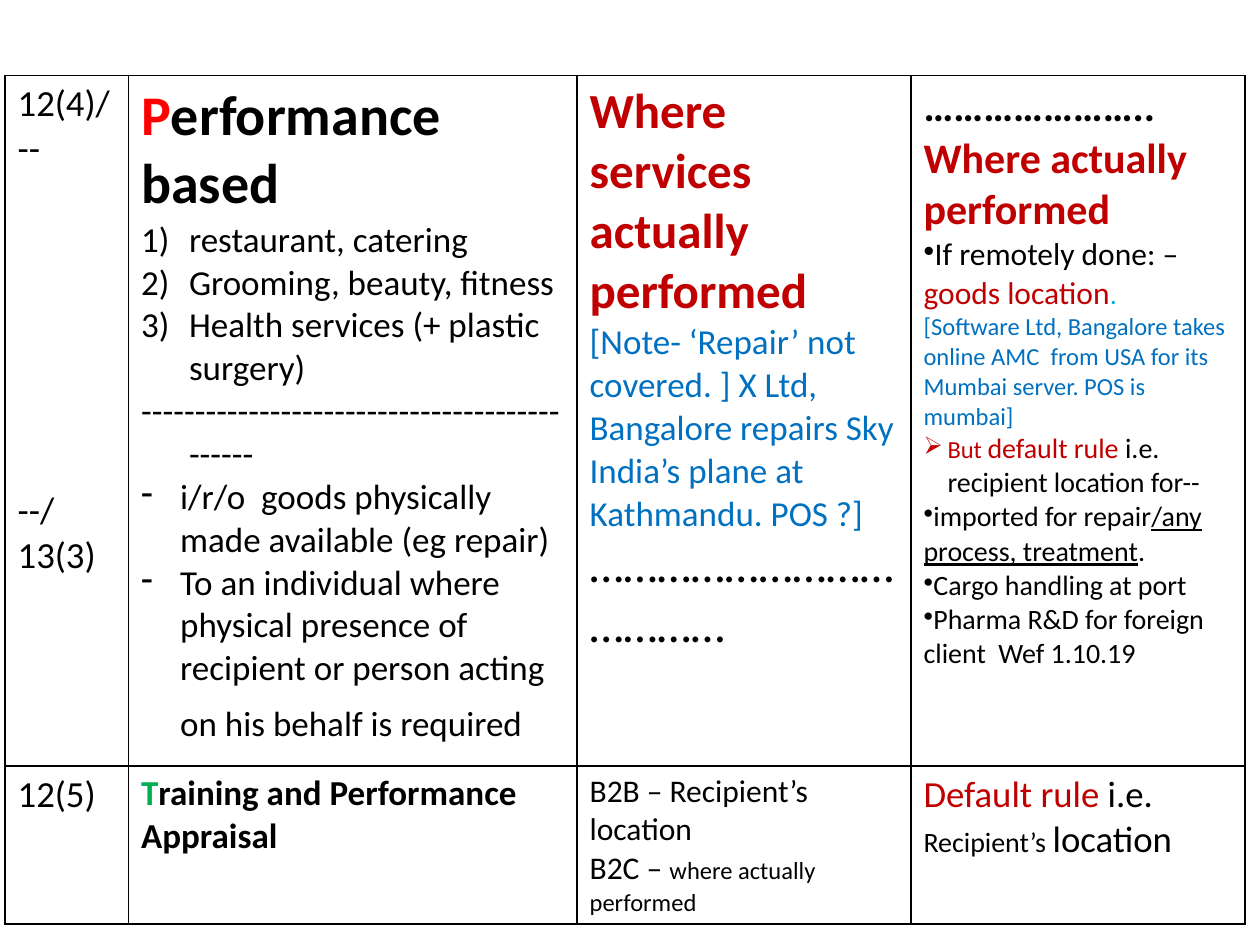
from lxml.etree import SubElement
from pptx import Presentation
from pptx.dml.color import RGBColor
from pptx.oxml.ns import qn
from pptx.util import Inches, Pt

COLORS = {
    "black": "000000", "white": "FFFFFF", "red": "FF0000", "dark red": "C00000",
    "blue": "0070C0", "light blue": "00B0F0", "green": "00B050",
}
FONT = "Calibri"
BORDER_WIDTH = Pt(1)
COLUMN_WIDTHS = [0.98, 3.56, 2.65, 2.65]
ROW_HEIGHTS = [5.48, 1.13]

# Paragraph styles: hanging indent in inches, bullet tag with its attributes
STYLES = {
    "plain": (0, None, {}),
    "number": (0.38, "a:buAutoNum", {"type": "arabicParenR"}),
    "rule": (0.38, None, {}),
    "dash": (0.31, "a:buChar", {"char": "-"}),
    "dot": (0, "a:buChar", {"char": "•"}),
    "arrow": (0.19, "a:buChar", {"char": "➢"}),
}


def add_span(para, text, size=16, color="black", bold=False, underline=False):
    span = para.add_run()
    span.text = text
    font = span.font
    font.name, font.size, font.bold = FONT, Pt(size), bold
    font.underline = underline
    font.color.rgb = RGBColor.from_string(COLORS[color])


# Each cell lists paragraphs: style, space before in points, then the spans
CELLS = [
    [
        [
            ("plain", 0, [("12(4)/--", {"size": 21})]),
            ("plain", 181, [("--/13(3)", {"size": 21})]),
        ],
        [
            ("plain", 0, [("P", {"size": 32, "color": "red", "bold": True}),
                          ("erformance based", {"size": 32, "bold": True})]),
            ("number", 0, [("restaurant, catering", {"size": 20})]),
            ("number", 0, [("Grooming, beauty, fitness", {"size": 20})]),
            ("number", 0, [("Health services (+ plastic surgery)", {"size": 20})]),
            ("rule", 0, [("-" * 45, {"size": 20})]),
            ("dash", 0, [("i/r/o  goods physically made available (eg repair)",
                          {"size": 20})]),
            ("dash", 0, [("To an individual where physical presence of recipient or "
                          "person acting on his behalf is required", {"size": 20}),
                         (" ", {"size": 28})]),
        ],
        [
            ("plain", 0, [("Where services actually performed",
                           {"size": 28, "color": "dark red", "bold": True})]),
            ("plain", 0, [("[Note- ‘Repair’ not covered. ] X Ltd, Bangalore repairs Sky "
                           "India’s plane at Kathmandu. POS ?]",
                           {"size": 20, "color": "blue"})]),
            ("plain", 0, [("…………………………………", {"size": 28})]),
        ],
        [
            ("plain", 0, [("…………………..", {"size": 24, "bold": True})]),
            ("plain", 0, [("Where actually performed",
                           {"size": 24, "color": "dark red", "bold": True})]),
            ("dot", 0, [("If remotely done: – ", {"size": 18}),
                        ("goods location", {"size": 18, "color": "dark red"}),
                        (".", {"color": "light blue"})]),
            ("plain", 0, [("[Software Ltd, Bangalore takes online AMC  from USA for its "
                           "Mumbai server. POS is mumbai]",
                           {"size": 14, "color": "blue"})]),
            ("arrow", 0, [("But ", {"size": 14, "color": "dark red"}),
                          ("default rule", {"color": "dark red"}),
                          (" i.e. recipient location for--", {})]),
            ("dot", 0, [("imported for repair", {}),
                        ("/any process, treatment", {"underline": True}),
                        (".", {})]),
            ("dot", 0, [("Cargo handling at port", {})]),
            ("dot", 0, [("Pharma R&D for foreign client  Wef 1.10.19", {})]),
        ],
    ],
    [
        [("plain", 0, [("12(5)", {"size": 21})])],
        [("plain", 0, [("T", {"size": 20, "color": "green", "bold": True}),
                       ("raining and Performance Appraisal",
                        {"size": 20, "bold": True})])],
        [
            ("plain", 0, [("B2B – Recipient’s location", {"size": 18})]),
            ("plain", 0, [("B2C – ", {"size": 18}),
                          ("where actually performed", {"size": 14})]),
        ],
        [("plain", 0, [("Default rule", {"size": 21, "color": "dark red"}),
                       (" i.e. ", {"size": 21}),
                       ("Recipient’s ", {}),
                       ("location", {"size": 21})])],
    ],
]

deck = Presentation()
deck.slide_width, deck.slide_height = Inches(10), Inches(7.5)
page = deck.slides.add_slide(deck.slide_layouts[6])

table = page.shapes.add_table(
    len(ROW_HEIGHTS), len(COLUMN_WIDTHS), Inches(0.04), Inches(0.6),
    Inches(sum(COLUMN_WIDTHS)), Inches(sum(ROW_HEIGHTS))).table
table.first_row = table.horz_banding = False
for column, width in zip(table.columns, COLUMN_WIDTHS):
    column.width = Inches(width)
for row, height in zip(table.rows, ROW_HEIGHTS):
    row.height = Inches(height)

for row, row_cells in zip(table.rows, CELLS):
    for cell, paragraphs in zip(row.cells, row_cells):
        properties = cell._tc.get_or_add_tcPr()
        for side in ("a:lnL", "a:lnR", "a:lnT", "a:lnB"):
            line = SubElement(properties, qn(side), w=str(BORDER_WIDTH))
            line_fill = SubElement(line, qn("a:solidFill"))
            SubElement(line_fill, qn("a:srgbClr"), val=COLORS["black"])
        cell.fill.solid()
        cell.fill.fore_color.rgb = RGBColor.from_string(COLORS["white"])

        frame = cell.text_frame
        for index, (style, space_before, spans) in enumerate(paragraphs):
            para = frame.add_paragraph() if index else frame.paragraphs[0]
            para.space_before = Pt(space_before)
            hang, bullet, attributes = STYLES[style]
            para_properties = para._p.get_or_add_pPr()
            para_properties.set("marL", str(Inches(hang)))
            para_properties.set("indent", str(-Inches(hang)))
            if bullet:
                SubElement(para_properties, qn(bullet), attributes)
            for text, formatting in spans:
                add_span(para, text, **formatting)

deck.save("out.pptx")
